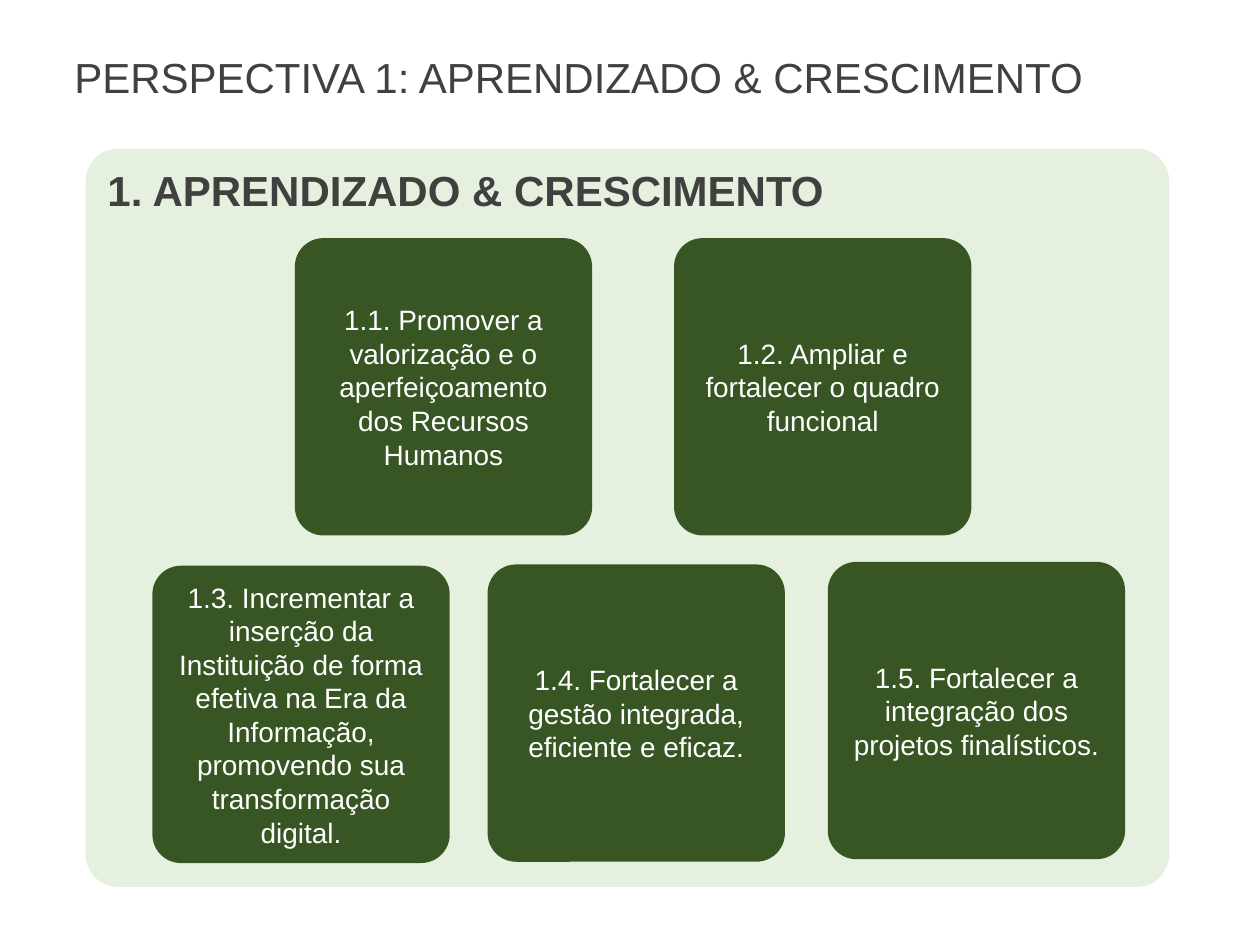
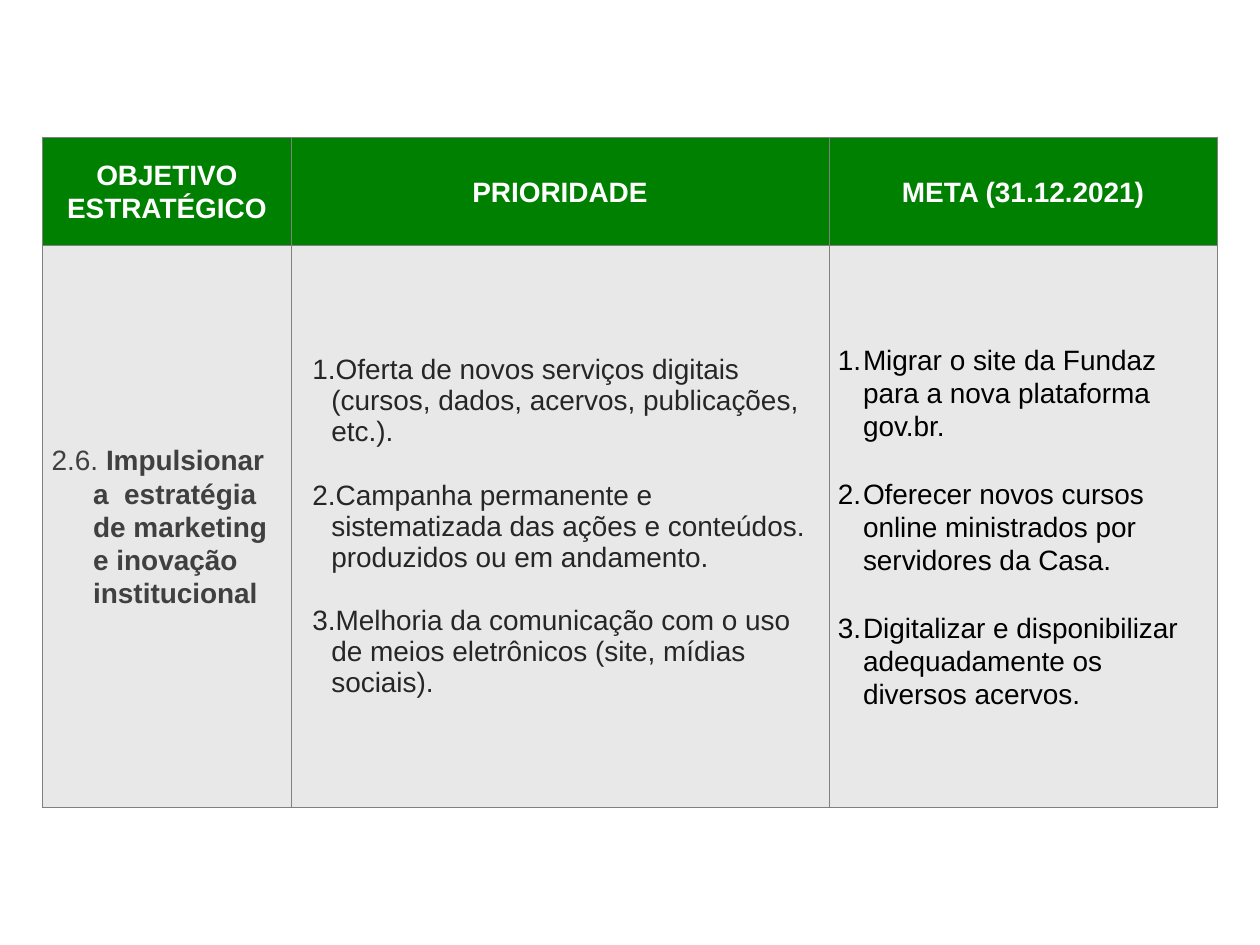
import pptx
import pptx.dml.color
import pptx.enum.shapes
import pptx.enum.text
import pptx.oxml
import pptx.oxml.ns
import pptx.util
from pptx.dml.color import RGBColor
from pptx.enum.text import MSO_ANCHOR, PP_ALIGN
from pptx.util import Inches

FONT = "Arial"
WHITE = RGBColor(0xFF, 0xFF, 0xFF)
BLACK = RGBColor(0x00, 0x00, 0x00)
TITLE_GREY = RGBColor(0x40, 0x40, 0x40)
BODY_GREY = RGBColor(0x26, 0x26, 0x26)
PANEL_GREEN = RGBColor(0xE5, 0xF1, 0xDE)
CARD_GREEN = RGBColor(0x37, 0x56, 0x23)
HEADER_GREEN = RGBColor(0x00, 0x80, 0x00)
CELL_GREY = RGBColor(0xE8, 0xE8, 0xE8)
BORDER_GREY = RGBColor(0x80, 0x80, 0x80)

TITLE_SIZE = 24
BODY_SIZE = 16
LOOSE_SPACING = 1.07
CARD_SIDE = 2.36

CARDS = [
    (2.34, 1.89, "1.1. Promover a valorização e o aperfeiçoamento dos Recursos Humanos"),
    (5.35, 1.89, "1.2. Ampliar e fortalecer o quadro funcional"),
    (1.21, 4.49, "1.3. Incrementar a inserção da Instituição de forma efetiva na Era da "
                 "Informação, promovendo sua transformação digital."),
    (3.87, 4.48, "1.4. Fortalecer a gestão integrada, eficiente e eficaz."),
    (6.57, 4.46, "1.5. Fortalecer a integração dos projetos finalísticos."),
]

COLUMN_WIDTHS = [1.97, 4.27, 3.08]
ROW_HEIGHTS = [0.86, 4.46]
HEADERS = ["OBJETIVO ESTRATÉGICO", "PRIORIDADE", "META (31.12.2021)"]
OBJECTIVE_NUMBER = "2.6. "
OBJECTIVE = "Impulsionar a  estratégia de marketing e inovação institucional"
PRIORITIES = [
    "Oferta de novos serviços digitais (cursos, dados, acervos, publicações, etc.).",
    "Campanha permanente e sistematizada das ações e conteúdos. produzidos ou em andamento.",
    "Melhoria da comunicação com o uso de meios eletrônicos (site, mídias sociais).",
]
GOALS = [
    "Migrar o site da Fundaz para a nova plataforma gov.br.",
    "Oferecer novos cursos online ministrados por servidores da Casa.",
    "Digitalizar e disponibilizar adequadamente os diversos acervos.",
]


def add_run(paragraph, text, color, size=BODY_SIZE, bold=False):
    run = paragraph.add_run()
    run.text = text
    run.font.name = FONT
    run.font.size = pptx.util.Pt(size)
    run.font.bold = bold
    run.font.color.rgb = color


def set_title(slide, text):
    title = slide.shapes.title
    title.left, title.top = Inches(0.49), Inches(0.36)
    title.width, title.height = Inches(8.31), Inches(0.5)
    frame = title.text_frame
    frame.auto_size = pptx.enum.text.MSO_AUTO_SIZE.NONE
    frame.vertical_anchor = MSO_ANCHOR.TOP
    paragraph = frame.paragraphs[0]
    paragraph.alignment = PP_ALIGN.LEFT
    add_run(paragraph, text, TITLE_GREY, TITLE_SIZE)


def add_rounded_box(slide, left, top, width, height, rounding, color):
    """Add a filled box without line and return its text frame."""
    shape = slide.shapes.add_shape(
        pptx.enum.shapes.MSO_SHAPE.ROUNDED_RECTANGLE,
        Inches(left), Inches(top), Inches(width), Inches(height))
    shape.adjustments[0] = rounding
    shape.shadow.inherit = False
    shape.fill.solid()
    shape.fill.fore_color.rgb = color
    shape.line.fill.background()
    shape.text_frame.word_wrap = True
    return shape.text_frame


def add_panel(slide, heading):
    frame = add_rounded_box(slide, 0.68, 1.18, 8.6, 5.86, 0.044, PANEL_GREEN)
    frame.vertical_anchor = MSO_ANCHOR.TOP
    frame.paragraphs[0].alignment = PP_ALIGN.LEFT
    add_run(frame.paragraphs[0], heading, TITLE_GREY, TITLE_SIZE, bold=True)


def add_card(slide, left, top, text):
    frame = add_rounded_box(slide, left, top, CARD_SIDE, CARD_SIDE, 0.096, CARD_GREEN)
    frame.vertical_anchor = MSO_ANCHOR.MIDDLE
    frame.paragraphs[0].alignment = PP_ALIGN.CENTER
    add_run(frame.paragraphs[0], text, WHITE)


def set_borders(cell):
    properties = cell._tc.get_or_add_tcPr()
    for side in ("lnL", "lnR", "lnT", "lnB"):
        properties.append(pptx.oxml.parse_xml(
            f'<a:{side} {pptx.oxml.ns.nsdecls("a")} w="{pptx.util.Pt(0.5)}">'
            f'<a:solidFill><a:srgbClr val="{BORDER_GREY}"/></a:solidFill></a:{side}>'))


def format_cell(cell, color):
    set_borders(cell)
    cell.fill.solid()
    cell.fill.fore_color.rgb = color
    cell.vertical_anchor = MSO_ANCHOR.MIDDLE
    cell.margin_left = cell.margin_right = Inches(0.07)
    cell.margin_top = cell.margin_bottom = 0


def set_hanging_indent(paragraph, left, hanging):
    properties = paragraph._p.get_or_add_pPr()
    properties.set("marL", str(Inches(left)))
    properties.set("indent", str(-Inches(hanging)))
    return properties


def fill_numbered_list(cell, items, color, left, hanging, spacing):
    frame = cell.text_frame
    for index, item in enumerate(items):
        paragraph = frame.add_paragraph() if index else frame.paragraphs[0]
        paragraph.line_spacing = spacing
        if index:
            paragraph.space_before = pptx.util.Pt(18.4 * spacing)
        properties = set_hanging_indent(paragraph, left, hanging)
        properties.append(pptx.oxml.parse_xml(
            f'<a:buAutoNum {pptx.oxml.ns.nsdecls("a")} type="arabicPeriod"/>'))
        add_run(paragraph, item, color)


def add_goals_table(slide):
    table = slide.shapes.add_table(
        len(ROW_HEIGHTS), len(COLUMN_WIDTHS), Inches(0.34), Inches(1.09),
        Inches(sum(COLUMN_WIDTHS)), Inches(sum(ROW_HEIGHTS))).table
    table.first_row = table.horz_banding = False
    for column, width in zip(table.columns, COLUMN_WIDTHS):
        column.width = Inches(width)
    for row, height, color in zip(table.rows, ROW_HEIGHTS, (HEADER_GREEN, CELL_GREY)):
        row.height = Inches(height)
        for cell in row.cells:
            format_cell(cell, color)

    for cell, header in zip(table.rows[0].cells, HEADERS):
        paragraph = cell.text_frame.paragraphs[0]
        paragraph.alignment = PP_ALIGN.CENTER
        paragraph.line_spacing = LOOSE_SPACING
        add_run(paragraph, header, WHITE, bold=True)

    objective_cell, priority_cell, goal_cell = table.rows[1].cells
    paragraph = objective_cell.text_frame.paragraphs[0]
    paragraph.line_spacing = LOOSE_SPACING
    set_hanging_indent(paragraph, 0.33, 0.33)
    add_run(paragraph, OBJECTIVE_NUMBER, TITLE_GREY)
    add_run(paragraph, OBJECTIVE, TITLE_GREY, bold=True)
    fill_numbered_list(priority_cell, PRIORITIES, BODY_GREY, 0.25, 0.15, 1.0)
    fill_numbered_list(goal_cell, GOALS, BLACK, 0.2, 0.2, LOOSE_SPACING)


def main():
    presentation = pptx.Presentation()
    presentation.slide_width = Inches(10)
    presentation.slide_height = Inches(7.5)
    title_only = presentation.slide_layouts.get_by_name("Title Only")
    blank = presentation.slide_layouts.get_by_name("Blank")

    perspective_slide = presentation.slides.add_slide(title_only)
    set_title(perspective_slide, "PERSPECTIVA 1: APRENDIZADO & CRESCIMENTO")
    add_panel(perspective_slide, "1. APRENDIZADO & CRESCIMENTO")
    for left, top, text in CARDS:
        add_card(perspective_slide, left, top, text)

    add_goals_table(presentation.slides.add_slide(blank))
    presentation.save("out.pptx")


if __name__ == "__main__":
    main()
